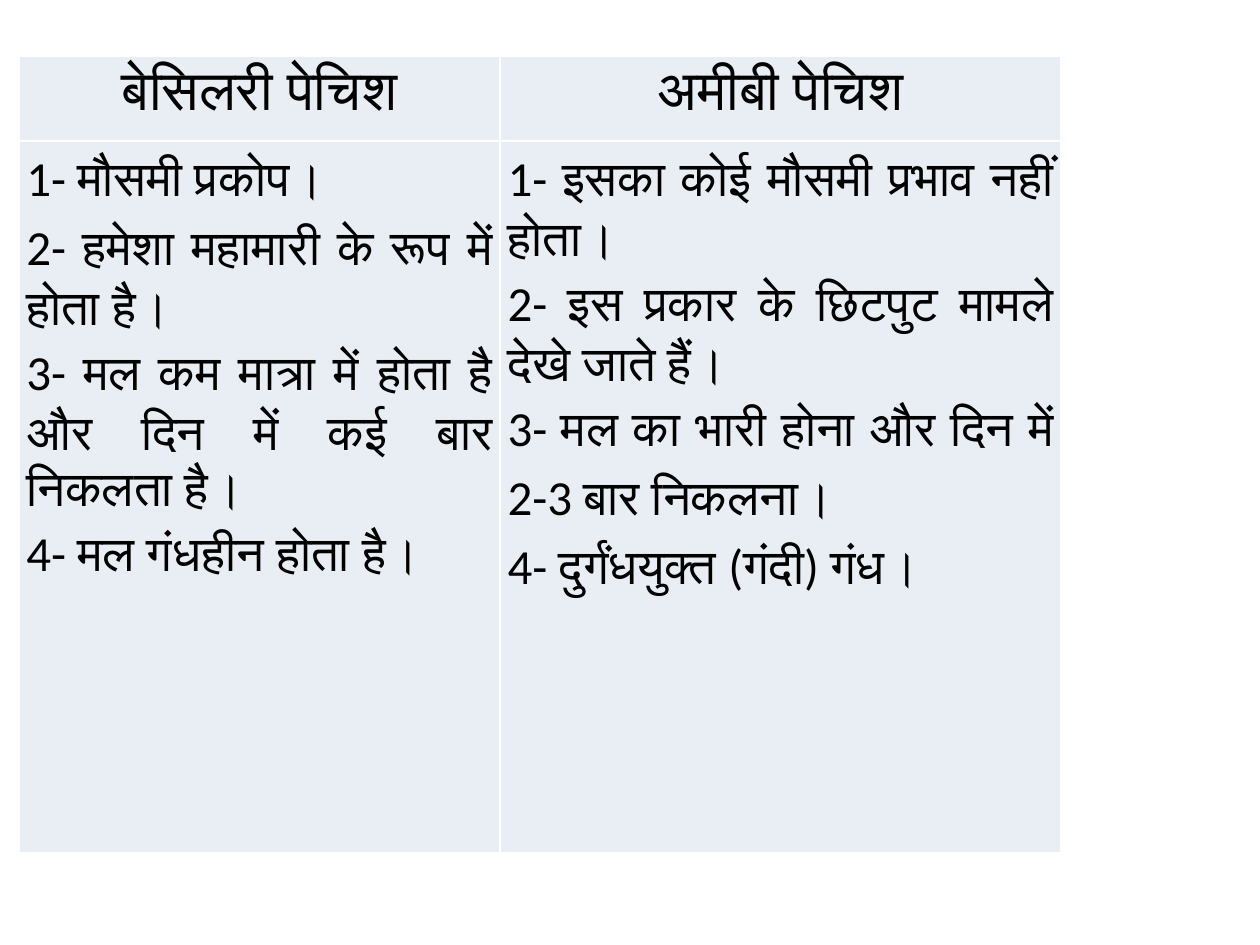
from lxml.etree import SubElement
from pptx import Presentation
from pptx.dml.color import RGBColor
from pptx.enum.text import PP_ALIGN
from pptx.oxml.ns import qn
from pptx.util import Inches, Pt

COLORS = {"text": "000000", "cell": "E9EDF4", "line": "FFFFFF"}
FONT = "Calibri"
WIDTHS = [3.82, 4.45]
HEIGHTS = [0.67, 5.65]

HEADS = ["बेसिलरी पेचिश", "अमीबी पेचिश"]
POINTS = [
    [
        "1- मौसमी प्रकोप।",
        "2- हमेशा महामारी के रूप में होता है।",
        "3- मल कम मात्रा में होता है और दिन में कई बार निकलता है।",
        "4- मल गंधहीन होता है।",
    ],
    [
        "1- इसका कोई मौसमी प्रभाव नहीं होता।",
        "2- इस प्रकार के छिटपुट मामले देखे जाते हैं।",
        "3- मल का भारी होना और दिन में 2-3 बार निकलना।",
        "4- दुर्गंधयुक्त (गंदी) गंध।",
    ],
]


def add_edges(cell):
    """Draw a thin line on all four sides; call before the fill is set."""
    props = cell._tc.get_or_add_tcPr()
    for side in ("lnL", "lnR", "lnT", "lnB"):
        line = SubElement(props, qn(f"a:{side}"), w=str(Pt(1)))
        fill = SubElement(line, qn("a:solidFill"))
        SubElement(fill, qn("a:srgbClr"), val=COLORS["line"])


def style_cell(cell):
    cell.margin_left = cell.margin_right = Inches(0.06)
    cell.margin_top = cell.margin_bottom = 0
    add_edges(cell)
    cell.fill.solid()
    cell.fill.fore_color.rgb = RGBColor.from_string(COLORS["cell"])


def add_text(cell, lines, size, align):
    frame = cell.text_frame
    for i, line in enumerate(lines):
        para = frame.add_paragraph() if i else frame.paragraphs[0]
        para.alignment = align
        para.line_spacing = 1.15
        run = para.add_run()
        run.text = line
        run.font.name = FONT
        run.font.size = Pt(size)
        run.font.bold = False
        run.font.color.rgb = RGBColor.from_string(COLORS["text"])


def add_grid(slide):
    frame = slide.shapes.add_table(
        len(HEIGHTS), len(WIDTHS), Inches(0.15), Inches(0.45),
        Inches(sum(WIDTHS)), Inches(sum(HEIGHTS)))
    table = frame.table
    table.first_row = table.horz_banding = False
    for col, width in zip(table.columns, WIDTHS):
        col.width = Inches(width)
    for row, height in zip(table.rows, HEIGHTS):
        row.height = Inches(height)
    for cell in table.iter_cells():
        style_cell(cell)
    return table


def main():
    deck = Presentation()
    deck.slide_width, deck.slide_height = Inches(10), Inches(7.5)
    slide = deck.slides.add_slide(deck.slide_layouts[6])

    # Comparison table: a heading above the points in each column
    table = add_grid(slide)
    for col, (head, points) in enumerate(zip(HEADS, POINTS)):
        add_text(table.cell(0, col), [head], 32, PP_ALIGN.CENTER)
        add_text(table.cell(1, col), points, 28, PP_ALIGN.JUSTIFY)

    deck.save("out.pptx")


if __name__ == "__main__":
    main()
